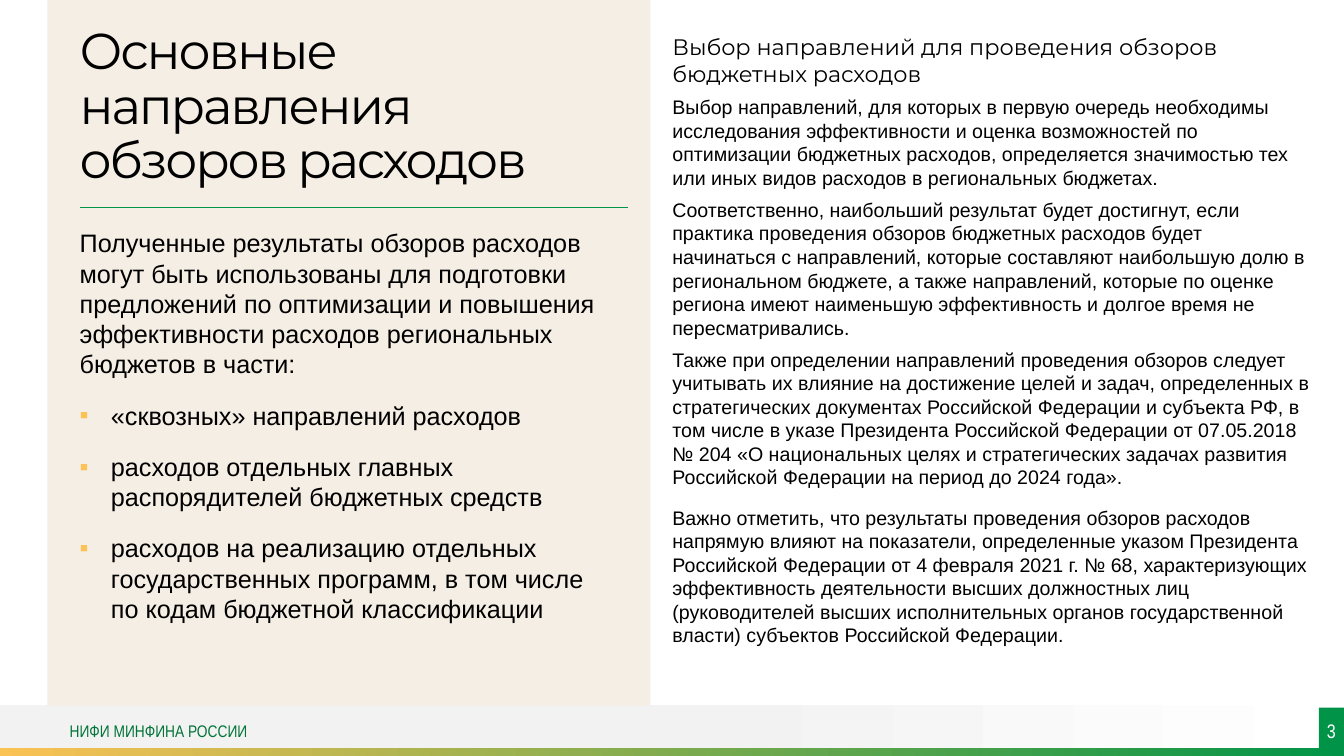
from pptx import Presentation
from pptx.dml.color import RGBColor
from pptx.enum import shapes, text
from pptx.oxml import ns, xmlchemy
from pptx.util import Inches, Pt

COLORS = {
    "black": "000000", "white": "FFFFFF", "band": "F2F2F2", "panel": "F4EEE4",
    "yellow": "FBC254", "green": "019448", "dark_green": "027438",
}
TITLE = "Основные направления обзоров расходов"
INTRO = ("Полученные результаты обзоров расходов могут быть использованы для подготовки "
         "предложений по оптимизации и повышения эффективности расходов региональных "
         "бюджетов в части:")
DIRECTIONS = [
    "«сквозных» направлений расходов",
    "расходов отдельных главных распорядителей бюджетных средств",
    "расходов на реализацию отдельных государственных программ, в том числе \n"
    "по кодам бюджетной классификации",
]
HEADING = "Выбор направлений для проведения обзоров бюджетных расходов"
DETAILS = [
    "Выбор направлений, для которых в первую очередь необходимы исследования "
    "эффективности и оценка возможностей по оптимизации бюджетных расходов, "
    "определяется значимостью тех или иных видов расходов в региональных бюджетах.",
    "Соответственно, наибольший результат будет достигнут, если практика проведения "
    "обзоров бюджетных расходов будет начинаться с направлений, которые составляют "
    "наибольшую долю в региональном бюджете, а также направлений, которые по оценке "
    "региона имеют наименьшую эффективность и долгое время не пересматривались.",
    "Также при определении направлений проведения обзоров следует учитывать их влияние "
    "на достижение целей и задач, определенных в стратегических документах Российской "
    "Федерации и субъекта РФ, в том числе в указе Президента Российской Федерации от "
    "07.05.2018 № 204 «О национальных целях и стратегических задачах развития "
    "Российской Федерации на период до 2024 года».",
    "Важно отметить, что результаты проведения обзоров расходов напрямую влияют на "
    "показатели, определенные указом Президента Российской Федерации от 4 февраля "
    "2021 г. № 68, характеризующих эффективность деятельности высших должностных лиц "
    "(руководителей высших исполнительных органов государственной власти) субъектов "
    "Российской Федерации.",
]
FOOTER, PAGE = "НИФИ МИНФИНА РОССИИ", "3"

WIDTH, HEIGHT = 13.33, 7.5
FOOTER_TOP, FOOTER_HEIGHT, STRIPE = 7.02, 0.45, 0.08
PANEL_LEFT, PANEL_WIDTH, PANEL_HEIGHT = 0.47, 5.98, 7
COLUMN_LEFT, COLUMN_WIDTH = 0.79, 5.44
BADGE_WIDTH = 0.25
DETAILS_LEFT = 6.57
INDENT = 0.31


def color(name):
    return RGBColor.from_string(COLORS[name])


def place(shape, left, top, width, height):
    shape.left, shape.top = Inches(left), Inches(top)
    shape.width, shape.height = Inches(width), Inches(height)


def add_block(slide, box, fill, end=None, start=0):
    """Add a plain rectangle, or a horizontal gradient when end is given."""
    shape = slide.shapes.add_shape(shapes.MSO_SHAPE.RECTANGLE, *map(Inches, box))
    shape.shadow.inherit = False
    shape.line.fill.background()
    if end:
        shape.fill.gradient()
        shape.fill.gradient_angle = 0
        stops = zip(shape.fill.gradient_stops, (start, 1), (fill, end))
        for stop, position, name in stops:
            stop.position = position
            stop.color.rgb = color(name)
    else:
        shape.fill.solid()
        shape.fill.fore_color.rgb = color(fill)
    return shape


def prepare_frame(shape, anchor, margin=0.0):
    frame = shape.text_frame
    frame.word_wrap = True
    frame.auto_size = text.MSO_AUTO_SIZE.NONE
    frame.vertical_anchor = anchor
    frame.margin_left = frame.margin_right = Inches(margin)
    frame.margin_top = frame.margin_bottom = Inches(margin / 2)
    return frame


def style(paragraph, font, size, ink="black", before=0, after=0,
          align=text.PP_ALIGN.LEFT):
    paragraph.alignment = align
    paragraph.space_before, paragraph.space_after = Pt(before), Pt(after)
    for run in paragraph.runs:
        run.font.name, run.font.size = font, Pt(size)
        run.font.color.rgb = color(ink)


def set_bullet(paragraph, char=None):
    properties = paragraph._p.get_or_add_pPr()
    indent = Inches(INDENT) if char else 0
    properties.set("marL", str(indent))
    properties.set("indent", str(-indent))
    if char:
        bullet_color = xmlchemy.OxmlElement("a:buClr")
        swatch = xmlchemy.OxmlElement("a:srgbClr")
        swatch.set("val", COLORS["yellow"])
        bullet_color.append(swatch)
        bullet = xmlchemy.OxmlElement("a:buChar")
        bullet.set("char", char)
        properties.extend([bullet_color, bullet])
    else:
        properties.append(xmlchemy.OxmlElement("a:buNone"))


def add_backdrop(slide):
    add_block(slide, (0, FOOTER_TOP - 0.03, WIDTH, FOOTER_HEIGHT), "band", "white", 0.53)
    add_block(slide, (0, HEIGHT - STRIPE, WIDTH, STRIPE), "yellow", "green")
    add_block(slide, (PANEL_LEFT, 0, PANEL_WIDTH, PANEL_HEIGHT), "panel")
    box = (0.69, FOOTER_TOP, 4.61, FOOTER_HEIGHT)
    footer = slide.shapes.add_textbox(*map(Inches, box))
    frame = prepare_frame(footer, text.MSO_ANCHOR.MIDDLE)
    frame.text = FOOTER
    style(frame.paragraphs[0], "Arial Narrow", 12, "dark_green")

    badge = add_block(
        slide, (WIDTH - BADGE_WIDTH, FOOTER_TOP, BADGE_WIDTH, FOOTER_HEIGHT), "green")
    frame = prepare_frame(badge, text.MSO_ANCHOR.MIDDLE)
    frame.text = PAGE
    style(frame.paragraphs[0], "Arial Narrow", 14, "white", align=text.PP_ALIGN.CENTER)


def fill_left_column(slide):
    title, body = slide.placeholders
    for placeholder in (title, body):
        slide.shapes._spTree.append(placeholder._element)  # bring above the panel

    place(title, COLUMN_LEFT, 0.65, COLUMN_WIDTH, 1.23)
    frame = prepare_frame(title, text.MSO_ANCHOR.BOTTOM)
    frame.text = TITLE
    heading = frame.paragraphs[0]
    heading.line_spacing = 0.9
    style(heading, "Montserrat", 36)
    heading.runs[0].font._element.set("spc", "-150")

    place(body, COLUMN_LEFT, 2.26, COLUMN_WIDTH, 4.94)
    frame = prepare_frame(body, text.MSO_ANCHOR.TOP)
    frame.text = INTRO
    for direction in DIRECTIONS:
        frame.add_paragraph().text = direction
    for index, paragraph in enumerate(frame.paragraphs):
        set_bullet(paragraph, "▪" if index else None)
        style(paragraph, "Arial", 18, before=10 if index else 0, after=5)

    rule = slide.shapes.add_connector(
        shapes.MSO_CONNECTOR.STRAIGHT, Inches(COLUMN_LEFT), Inches(2.06),
        Inches(COLUMN_LEFT + COLUMN_WIDTH), Inches(2.06))
    rule.line.color.rgb = color("green")
    rule.line.width = Pt(0.5)
    rule._element.find(ns.qn("p:spPr")).append(xmlchemy.OxmlElement("a:effectLst"))


def fill_right_column(slide):
    box = (DETAILS_LEFT, 0.28, 6.52, 6.7)
    details = slide.shapes.add_textbox(*map(Inches, box))
    frame = prepare_frame(details, text.MSO_ANCHOR.TOP, margin=0.1)
    frame.text = "\n".join([HEADING, *DETAILS])
    heading, *paragraphs = frame.paragraphs
    style(heading, "Montserrat", 16, after=6)
    for paragraph in paragraphs:
        style(paragraph, "Arial", 14, before=6 if paragraph is paragraphs[-1] else 0, after=6)


def main():
    presentation = Presentation()
    presentation.slide_width, presentation.slide_height = Inches(WIDTH), Inches(HEIGHT)
    slide = presentation.slides.add_slide(presentation.slide_layouts[1])
    add_backdrop(slide)
    fill_left_column(slide)
    fill_right_column(slide)
    presentation.save("out.pptx")


if __name__ == "__main__":
    main()
